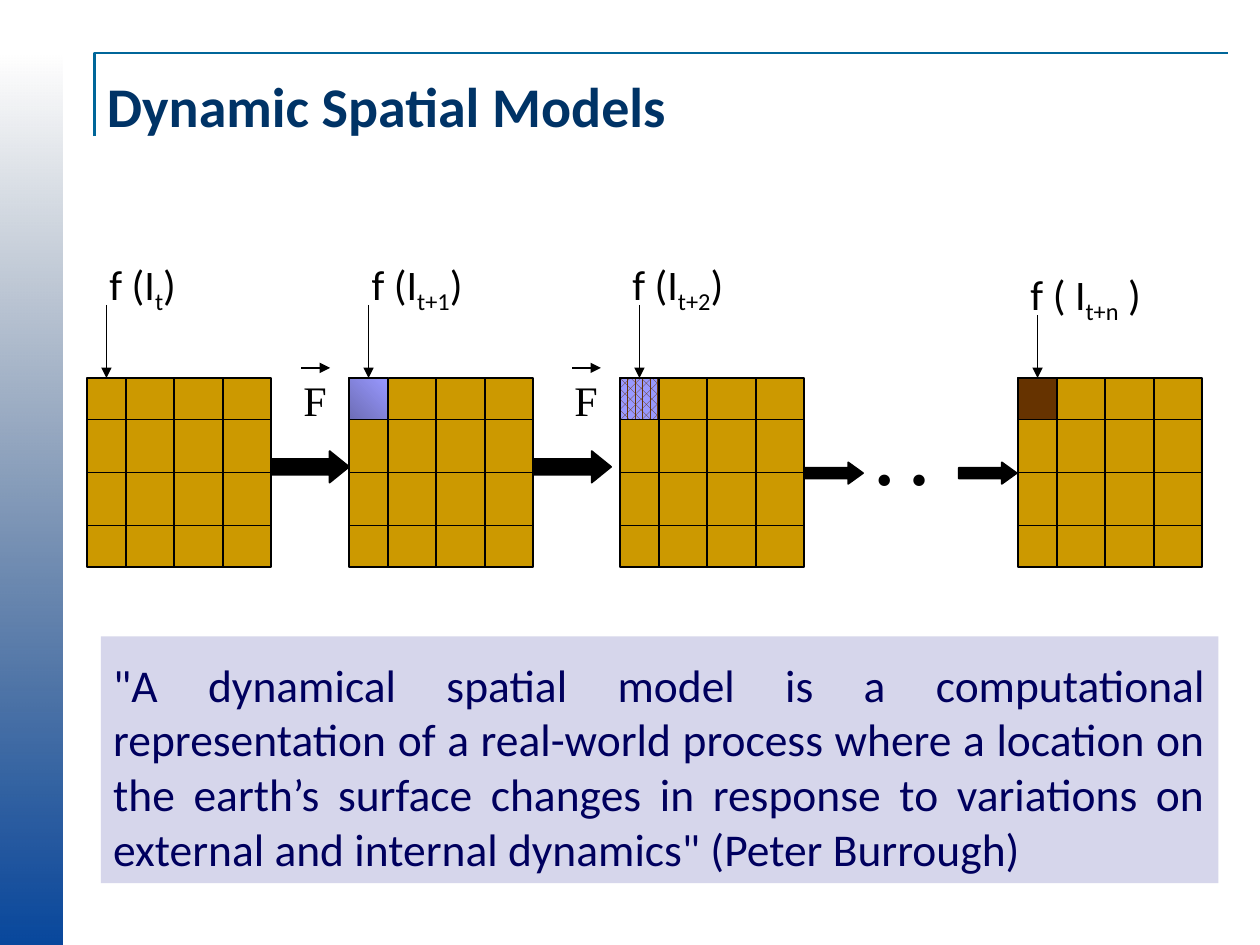
from lxml import etree
from pptx import Presentation
from pptx import util as u
from pptx.dml.color import RGBColor
from pptx.enum import dml, shapes, text
from pptx.oxml.ns import qn

COLORS = {
    "black": "000000", "rule": "006699", "title": "003366", "quote": "00005E",
    "panel": "D6D6EB", "land": "CC9900", "brown": "663300", "violet": "9999FF",
    "dusk": "6D6DB6", "bar": "08479C", "bar_end": "042148",
}
RECT = shapes.MSO_SHAPE.RECTANGLE
ARROW = shapes.MSO_SHAPE.RIGHT_ARROW
GRID_TOP, GRID_WIDTH, GRID_HEIGHT = 3, 1.46, 1.5
ROWS, COLUMNS = (0.33, 0.75, 1.17), (0.31, 0.69, 1.08)


def rgb(name):
    return RGBColor.from_string(COLORS[name])


class SlideBuilder:
    """Draws styled elements on the current slide."""

    def __init__(self, slide):
        self.slide = slide
        self.font = "Calibri"

    def outline(self, shape, color="black", width=1):
        if color:
            shape.line.color.rgb = rgb(color)
            shape.line.width = u.Pt(width)
        else:
            shape.line.fill.background()

    def shape(self, kind, box, fill=None, line="black", parent=None):
        owner = parent or self.slide
        shape = owner.shapes.add_shape(kind, *map(u.Inches, box))
        shape.shadow.inherit = False
        if fill:
            shape.fill.solid()
            shape.fill.fore_color.rgb = rgb(fill)
        self.outline(shape, line)
        return shape

    def gradient(self, shape, names, angle=0):
        shape.fill.gradient()
        shape.fill.gradient_angle = angle
        for stop, name in zip(shape.fill.gradient_stops, names):
            stop.color.rgb = rgb(name)

    def fade_out(self, shape):
        last = shape._element.spPr.findall(".//" + qn("a:srgbClr"))[-1]
        etree.SubElement(last, qn("a:alpha"), val="0")

    def line(self, start, end, head=False, parent=None):
        owner = parent or self.slide
        points = map(u.Inches, (*start, *end))
        line = owner.shapes.add_connector(shapes.MSO_CONNECTOR.STRAIGHT, *points)
        self.outline(line)
        if head:
            etree.SubElement(line.line._get_or_add_ln(), qn("a:tailEnd"), type="triangle")
        etree.SubElement(line._element.spPr, qn("a:effectLst"))
        return line

    def corner_rule(self, points):
        first, *rest = [tuple(map(u.Inches, point)) for point in points]
        builder = self.slide.shapes.build_freeform(*first)
        builder.add_line_segments(rest, close=False)
        rule = builder.convert_to_shape()
        rule.shadow.inherit = False
        rule.fill.background()
        self.outline(rule, "rule", 1.5)

    def fill_text(self, shape, runs, size, color="black", bold=False, font=None):
        frame = shape.text_frame
        frame.word_wrap = True
        paragraph = frame.paragraphs[0]
        for content, baseline in runs:
            run = paragraph.add_run()
            run.text = content
            if baseline:
                run._r.get_or_add_rPr().set("baseline", str(baseline))
        paragraph.font.name = font or self.font
        paragraph.font.size = u.Pt(size)
        paragraph.font.bold = bold
        paragraph.font.color.rgb = rgb(color)
        return paragraph

    def label(self, box, runs, size=24, **style):
        shape = self.slide.shapes.add_textbox(*map(u.Inches, box))
        self.fill_text(shape, runs, size, **style)
        return shape

    def block_arrow(self, left, top, width, height, head):
        arrow = self.shape(ARROW, (left, top, width, height), "black")
        arrow.adjustments[1] = head

    def grid(self, left):
        group = self.slide.shapes.add_group_shape()
        right, bottom = left + GRID_WIDTH, GRID_TOP + GRID_HEIGHT
        field = self.shape(RECT, (left, GRID_TOP, GRID_WIDTH, GRID_HEIGHT), "land", parent=group)
        for offset in ROWS:
            y = GRID_TOP + offset
            row = self.line((left, y), (right, y), parent=group)
            if offset == GRID_HEIGHT / 2:
                row.begin_connect(field, 1)
                row.end_connect(field, 3)
        for offset in COLUMNS:
            x = left + offset
            self.line((x, GRID_TOP), (x, bottom), parent=group)

    def first_cell(self, left):
        return self.shape(RECT, (left, GRID_TOP, COLUMNS[0], ROWS[0]))

    def pointer(self, left, top, cell=None):
        x = left + COLUMNS[0] / 2
        pointer = self.line((x, top), (x, GRID_TOP), head=True)
        if cell:
            pointer.end_connect(cell, 0)


def main():
    presentation = Presentation()
    presentation.slide_width, presentation.slide_height = u.Inches(10), u.Inches(7.5)
    slide = presentation.slides.add_slide(presentation.slide_layouts[6])
    builder = SlideBuilder(slide)

    sidebar = builder.shape(RECT, (-3.29, 3.71, 7.08, 0.5), line=None)
    sidebar.rotation = 270
    builder.gradient(sidebar, ("bar", "bar_end"))
    builder.fade_out(sidebar)
    builder.corner_rule([(0.75, 1.08), (0.75, 0.42), (9.75, 0.42)])
    title = builder.label((0.75, 0.42, 8.92, 0.83), [("Dynamic Spatial Models", 0)],
                          32, color="title", bold=True)
    title.text_frame.vertical_anchor = text.MSO_ANCHOR.MIDDLE

    grid_lefts = (0.69, 2.77, 4.92, 8.08)
    for left in grid_lefts:
        builder.grid(left)
    for left in (2.15, 4.23):
        builder.block_arrow(left, 3.58, 0.62, 0.25, 0.616)
    for left in (6.39, 7.61):
        builder.block_arrow(left, 3.67, 0.46, 0.17, 0.693)

    shaded, patterned, solid = cells = [builder.first_cell(left) for left in grid_lefts[1:]]
    builder.gradient(shaded, ("dusk", "violet"), 45)
    patterned.fill.patterned()
    patterned.fill.pattern = dml.MSO_PATTERN.PERCENT_60
    patterned.fill.fore_color.rgb = rgb("brown")
    patterned.fill.back_color.rgb = rgb("violet")
    solid.fill.solid()
    solid.fill.fore_color.rgb = rgb("brown")
    for left, top, cell in zip(grid_lefts, (2.42, 2.42, 2.42, 2.5), (None, *cells)):
        builder.pointer(left, top, cell)

    states = [
        ((0.77, 2, 1.4, 0.5), "f (I", "t", ")"),
        ((2.85, 2, 1.82, 0.5), "f (I", "t+1", ")"),
        ((4.92, 2, 1.83, 0.5), "f (I", "t+2", ")"),
        ((8.08, 2.08, 1.62, 0.5), "f ( I", "t+n", " )"),
    ]
    for box, opening, index, closing in states:
        builder.label(box, [(opening, 0), (index, -25000), (closing, 0)])

    serif = "Times New Roman"
    for left, width in ((2.31, 0.46), (4.46, 0.23)):
        builder.label((left, 2.92, width, 0.5), [("F", 0)], font=serif)
        builder.line((left + 0.08, 2.92), (left + 0.31, 2.92), head=True)
    builder.label((6.85, 3.25, 0.85, 0.77), [(". .", 0)], 40, bold=True, font=serif)

    panel = builder.shape(RECT, (0.8, 5.05, 8.87, 1.96), "panel", line=None)
    panel.text_frame.margin_top = u.Inches(0.15)
    quote = (
        "\"A dynamical spatial model is a computational representation of a real-world "
        "process where a location on the earth’s surface changes in response to "
        "variations on external and internal dynamics\" (Peter Burrough)"
    )
    paragraph = builder.fill_text(panel, [(quote, 0)], 26, color="quote")
    paragraph.alignment = text.PP_ALIGN.JUSTIFY

    presentation.save("out.pptx")


if __name__ == "__main__":
    main()
